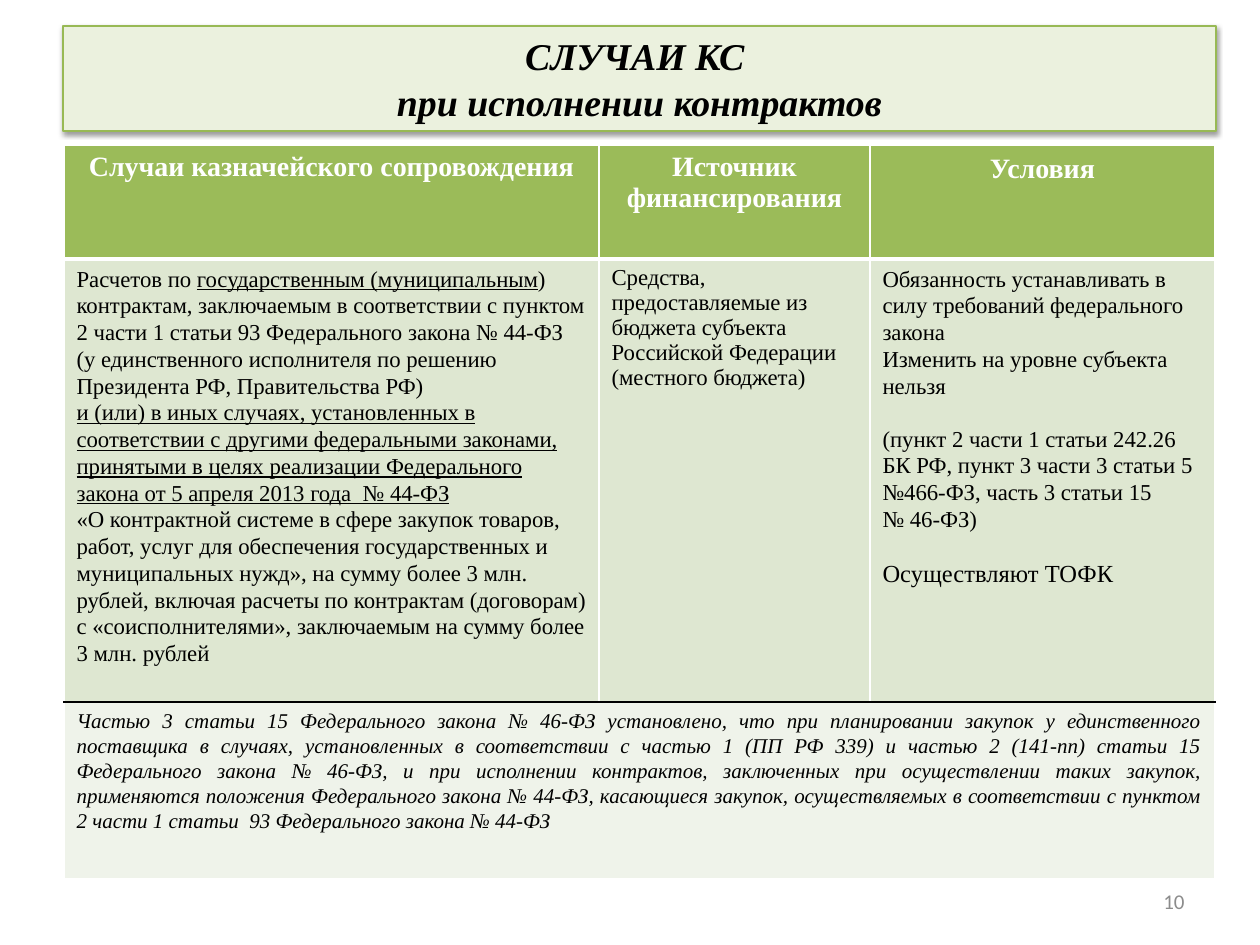
"""Build the slide on treasury support cases in contract execution."""
import copy
import pptx
import pptx.util
import pptx.dml.color
import pptx.enum.text
import pptx.oxml
import pptx.oxml.ns

RGB = pptx.dml.color.RGBColor
ALIGN = pptx.enum.text.PP_ALIGN
ANCHOR = pptx.enum.text.MSO_ANCHOR
Pt = pptx.util.Pt
PX = 914400 / 126
BLACK = RGB(0x00, 0x00, 0x00)
WHITE = RGB(0xFF, 0xFF, 0xFF)
GREY = RGB(0x8C, 0x8C, 0x8C)
TITLE_FILL = RGB(0xEB, 0xF1, 0xDE)
TITLE_LINE = RGB(0x98, 0xB9, 0x55)
HEAD_FILL = RGB(0x9B, 0xBB, 0x59)
BODY_FILL = RGB(0xDE, 0xE7, 0xD1)
NOTE_FILL = RGB(0xEF, 0xF3, 0xEA)
SERIF = "Times New Roman"
NS = pptx.oxml.ns.nsdecls("a")


def write(p, runs, color, para, **font):
    for name, value in para.items():
        setattr(p, name, value)
    for text, extra in runs:
        r = p.add_run()
        r.text = text
        r.font.color.rgb = color
        for name, value in {"name": SERIF, **font, **extra}.items():
            setattr(r.font, name, value)


def border(cell, side, color, width):
    cell._tc.get_or_add_tcPr().append(pptx.oxml.parse_xml(
        f'<a:ln{side} {NS} w="{Pt(width)}"><a:solidFill><a:srgbClr val="{color}"/>'
        f'</a:solidFill></a:ln{side}>'))


prs = pptx.Presentation()
prs.slide_width, prs.slide_height = pptx.util.Inches(10), pptx.util.Inches(7.5)
s = prs.slides.add_slide(prs.slide_layouts[5])

sp = s.shapes.title
sp.left, sp.top, sp.width, sp.height = [round(v * PX) for v in (63, 26, 1153, 105)]
sp.fill.solid()
sp.fill.fore_color.rgb = TITLE_FILL
sp.line.color.rgb = TITLE_LINE
sp.line.width = Pt(0.75)
sp._element.spPr.append(pptx.oxml.parse_xml(
    f'<a:effectLst {NS}><a:outerShdw blurRad="{Pt(3.1)}" dist="{Pt(1.6)}" dir="5400000" '
    'rotWithShape="0"><a:srgbClr val="000000"><a:alpha val="38000"/></a:srgbClr>'
    '</a:outerShdw></a:effectLst>'))
tf = sp.text_frame
tf.vertical_anchor = ANCHOR.MIDDLE
p = tf.paragraphs[0]
title_font = {"size": Pt(21.6), "bold": True, "italic": True}
write(p, [("СЛУЧАИ КС ", {})], BLACK, {"alignment": ALIGN.CENTER}, **title_font)
p.add_line_break()
p._p[-1].append(copy.deepcopy(p.runs[0]._r.rPr))
write(p, [("при исполнении контрактов", {})], BLACK, {}, **title_font)

LEFT = {"alignment": ALIGN.LEFT, "line_spacing": 1.07}
GAP = {**LEFT, "space_before": Pt(15)}
CENTER = {"alignment": ALIGN.CENTER}
NOTE = {"alignment": ALIGN.JUSTIFY, "line_spacing": 1.07, "space_after": Pt(8)}
U = {"underline": True}
rows = [
    (114, HEAD_FILL, WHITE, {"size": Pt(16), "bold": True}, [
        [([("Случаи казначейского сопровождения", {})], CENTER)],
        [([("Источник финансирования", {})], CENTER)],
        [([("Условия", {})], {**CENTER, "line_spacing": 1.07, "space_after": Pt(8)})],
    ]),
    (443, BODY_FILL, BLACK, {"size": Pt(13), "bold": False}, [
        [([("Расчетов по ", {}), ("государственным (муниципальным", U),
           (") контрактам, заключаемым в соответствии с пунктом 2 части 1 статьи 93 "
            "Федерального закона № 44-ФЗ (у единственного исполнителя по решению "
            "Президента РФ, Правительства РФ)", {})], LEFT),
         ([("и (или) в иных случаях, установленных в соответствии с другими "
            "федеральными законами, принятыми в целях реализации Федерального закона "
            "от 5 апреля 2013 года  № 44-ФЗ", U)], LEFT),
         ([("«О контрактной системе в сфере закупок товаров, работ, услуг для "
            "обеспечения государственных и муниципальных нужд», на сумму более 3 млн. "
            "рублей, включая расчеты по контрактам (договорам) с «соисполнителями», "
            "заключаемым на сумму более 3 млн. рублей", {})], LEFT)],
        [([("Средства, предоставляемые из бюджета субъекта Российской Федерации "
            "(местного бюджета)", {})], {"alignment": ALIGN.LEFT})],
        [([("Обязанность устанавливать в силу требований федерального закона", {})], LEFT),
         ([("Изменить на уровне субъекта", {})], LEFT),
         ([("нельзя", {})], LEFT),
         ([("(пункт 2 части 1 статьи 242.26 БК РФ, пункт 3 части 3 статьи 5 №466-ФЗ, "
            "часть 3 статьи 15", {})], GAP),
         ([("№ 46-ФЗ)", {})], LEFT),
         ([("Осуществляют ТОФК", {"size": Pt(14)})], {**GAP, "space_after": Pt(8)})],
    ]),
    (177, NOTE_FILL, BLACK, {"size": Pt(12), "bold": False, "italic": True}, [
        [([("Частью 3 статьи 15 Федерального закона № 46-ФЗ установлено, что при "
            "планировании закупок у единственного поставщика в случаях, установленных "
            "в соответствии с частью 1 (ПП РФ 339) и частью 2 (141-пп) статьи 15 "
            "Федерального закона № 46-ФЗ, и при исполнении контрактов, заключенных при "
            "осуществлении таких закупок, применяются положения Федерального закона "
            "№ 44-ФЗ, касающиеся закупок, осуществляемых в соответствии с пунктом 2 "
            "части 1 статьи  93 Федерального закона № 44-ФЗ", {})], NOTE)],
    ]),
]
edges = [(WHITE, 1), (WHITE, 3), (BLACK, 1), (WHITE, 1)]
widths = [535, 271, 345]
table = s.shapes.add_table(3, 3, *[round(v * PX) for v in (64, 145, 1151, 734)]).table
for col, width in zip(table.columns, widths):
    col.width = round(width * PX)
table.cell(2, 0).merge(table.cell(2, 2))
for i, (height, fill, color, font, texts) in enumerate(rows):
    table.rows[i].height = round(height * PX)
    for cell in table.rows[i].cells:
        for side, edge in zip("LRTB", [(WHITE, 1), (WHITE, 1), edges[i], edges[i + 1]]):
            border(cell, side, *edge)
        cell.fill.solid()
        cell.fill.fore_color.rgb = fill
    for cell, paragraphs in zip(table.rows[i].cells, texts):
        tf = cell.text_frame
        for j, (runs, para) in enumerate(paragraphs):
            p = tf.add_paragraph() if j else tf.paragraphs[0]
            write(p, runs, color, para, **font)

sp = s.shapes.add_textbox(*[round(v * PX) for v in (903, 876, 294, 50)])
tf = sp.text_frame
tf.word_wrap = True
tf.vertical_anchor = ANCHOR.MIDDLE
write(tf.paragraphs[0], [("10", {"name": "Calibri"})], GREY,
      {"alignment": ALIGN.RIGHT}, size=Pt(12))

prs.save("out.pptx")
